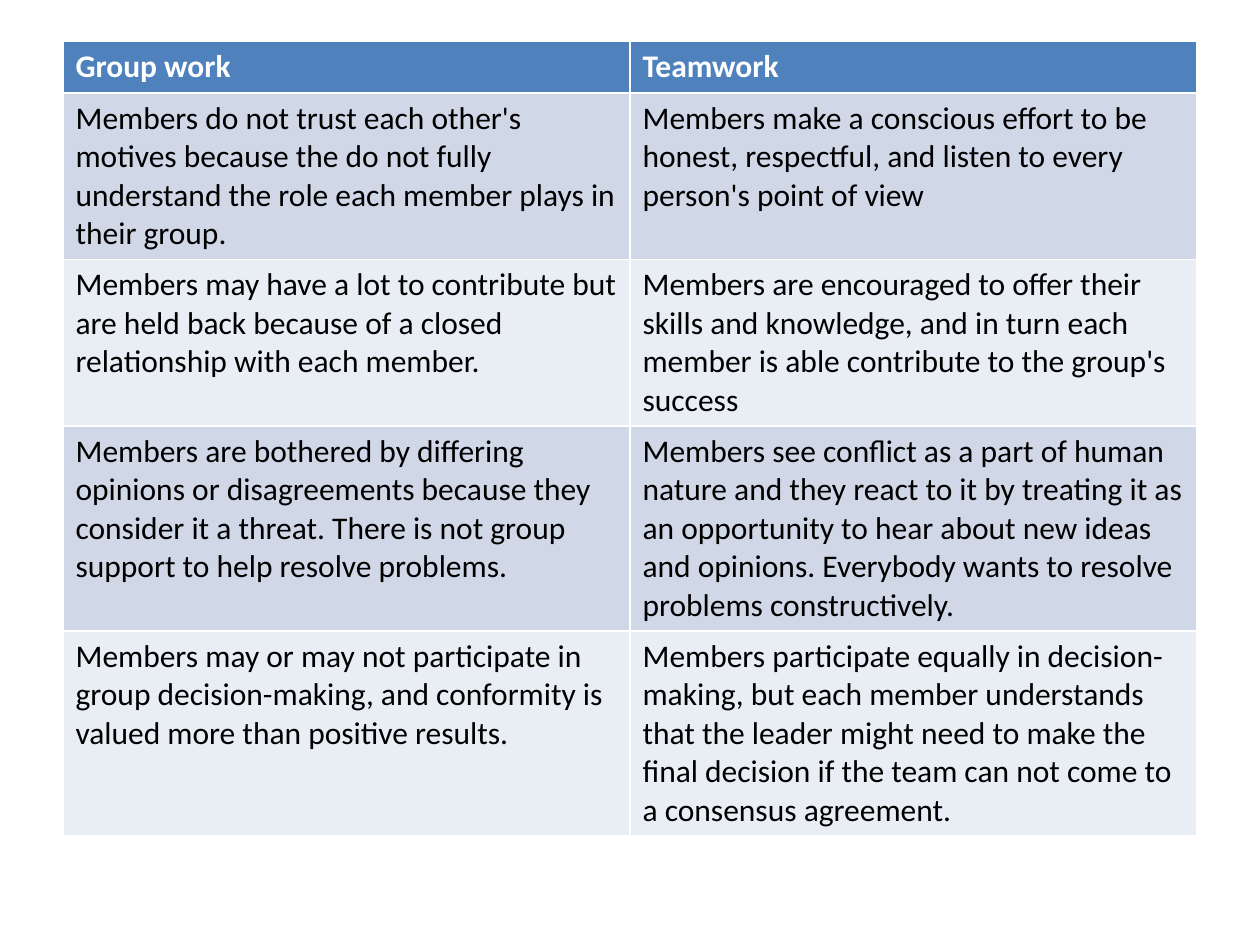
"""Build a slide with a table that compares group work with teamwork."""
from pptx import Presentation
from pptx import util as u
from pptx.dml import color

HUES = {"head": "4F81BD", "odd": "D0D8E8", "even": "E9EDF4",
        "white": "FFFFFF", "black": "000000"}

ROWS = [
    ("Group work", "Teamwork"),
    ("Members do not trust each other's motives because the do not fully "
     "understand the role each member plays in their group.",
     "Members make a conscious effort to be honest, respectful, and listen "
     "to every person's point of view"),
    ("Members may have a lot to contribute but are held back because of a "
     "closed relationship with each member.",
     "Members are encouraged to offer their skills and knowledge, and in turn "
     "each member is able contribute to the group's success"),
    ("Members are bothered by differing opinions or disagreements because "
     "they consider it a threat. There is not group support to help resolve "
     "problems.",
     "Members see conflict as a part of human nature and they react to it by "
     "treating it as an opportunity to hear about new ideas and opinions. "
     "Everybody wants to resolve problems constructively."),
    ("Members may or may not participate in group decision-making, and "
     "conformity is valued more than positive results.",
     "Members participate equally in decision-making, but each member "
     "understands that the leader might need to make the final decision if "
     "the team can not come to a consensus agreement."),
]


def write(cell, words, fill="odd", ink="black", bold=False, size=18):
    cell.fill.solid()
    cell.fill.fore_color.rgb = color.RGBColor.from_string(HUES[fill])
    run = cell.text_frame.paragraphs[0].add_run()
    run.text = words
    run.font.name = "Calibri"
    run.font.size = u.Pt(size)
    run.font.bold = bold
    run.font.color.rgb = color.RGBColor.from_string(HUES[ink])


deck = Presentation()
deck.slide_width, deck.slide_height = u.Inches(10), u.Inches(7.5)
slide = deck.slides.add_slide(deck.slide_layouts[6])

high = u.Inches(6.21)
frame = slide.shapes.add_table(len(ROWS), 2, u.Inches(0.5), u.Inches(0.33),
                               u.Inches(9), high)
table = frame.table
for i, pair in enumerate(ROWS):
    table.rows[i].height = u.Inches(0.41)
    if i == 0:
        look = {"fill": "head", "ink": "white", "bold": True}
    else:
        look = {"fill": "odd" if i % 2 else "even"}
    for j, words in enumerate(pair):
        write(table.cell(i, j), words, **look)
frame.height = high

deck.save("out.pptx")
